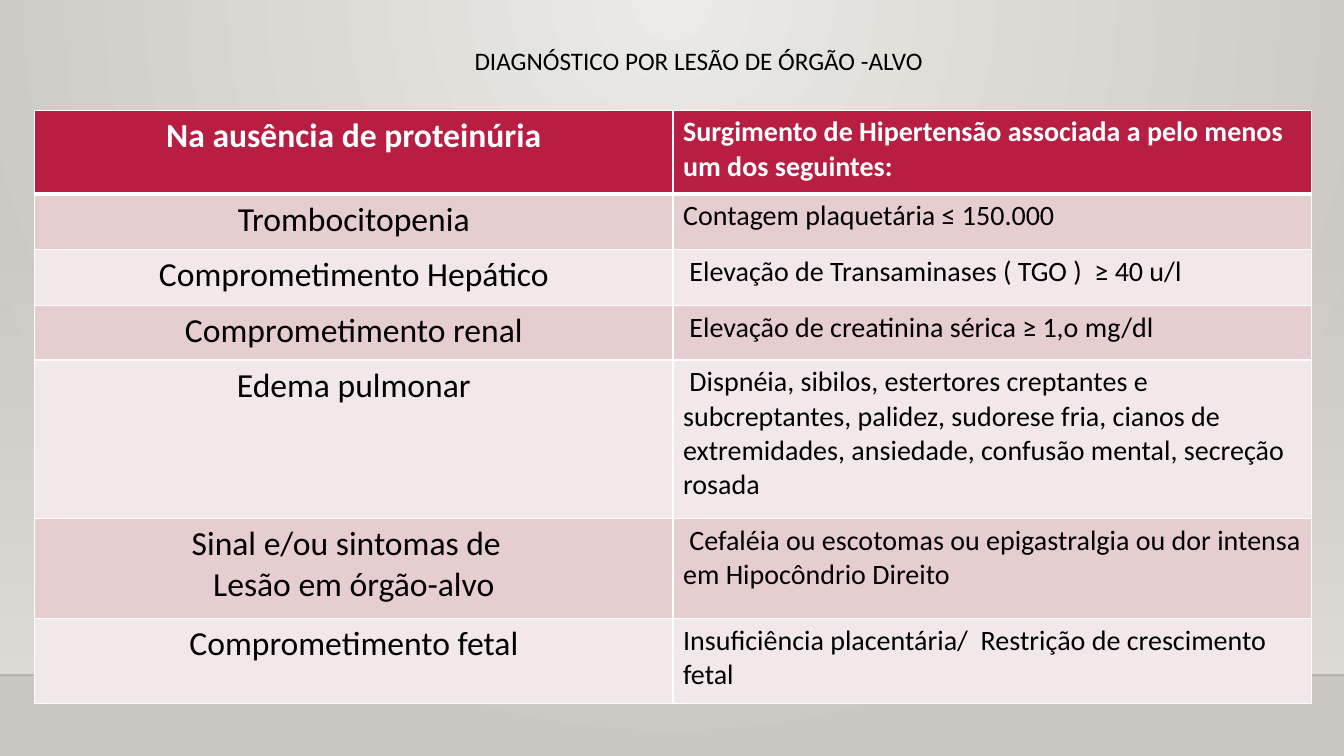
from dataclasses import dataclass
from itertools import cycle

from pptx import Presentation
from pptx.dml.color import RGBColor
from pptx.enum.shapes import MSO_CONNECTOR, MSO_SHAPE
from pptx.enum.text import MSO_ANCHOR, MSO_AUTO_SIZE, PP_ALIGN
from pptx.oxml import parse_xml
from pptx.oxml.ns import nsdecls, qn
from pptx.util import Emu, Pt

PX = 9525
SLIDE_BOX = (0, 0, 1280, 720)


@dataclass(frozen=True)
class Theme:
    """Colours, font and type sizes of the slide."""
    font: str = "Calibri"
    ink: str = "000000"
    white: str = "FFFFFF"
    header: str = "B71E42"
    bands: tuple = ("E6CDCF", "F3E8E9")
    glow: str = "ECEAE7"
    edge: str = "CAC7C1"
    wall: str = "DFDBD5"
    title_size: int = 18
    condition_size: int = 24
    finding_size: int = 20
    border: int = 1
    header_border: int = 3


THEME = Theme()

HEADINGS = ("Na ausência de proteinúria",
            "Surgimento de Hipertensão associada a pelo menos um dos seguintes:")
CRITERIA = (
    ("Trombocitopenia", "Contagem plaquetária ≤ 150.000"),
    ("Comprometimento Hepático", " Elevação de Transaminases ( TGO )  ≥ 40 u/l"),
    ("Comprometimento renal", " Elevação de creatinina sérica ≥ 1,o mg/dl"),
    ("Edema pulmonar",
     " Dispnéia, sibilos, estertores creptantes e subcreptantes, palidez, sudorese fria, "
     "cianos de extremidades, ansiedade, confusão mental, secreção rosada"),
    ("Sinal e/ou sintomas de  \nLesão em órgão-alvo",
     " Cefaléia ou escotomas ou epigastralgia ou dor intensa em Hipocôndrio Direito"),
    ("Comprometimento fetal",
     "Insuficiência placentária/  Restrição de crescimento fetal"),
)
ROW_HEIGHTS = (80, 53, 53, 52, 151, 95, 81)


def px(*lengths):
    """Turn pixel lengths into EMU."""
    return [Emu(length * PX) for length in lengths]


def write(frame, text, size, color=THEME.ink, bold=False, align=PP_ALIGN.LEFT):
    """Fill a text frame, one paragraph per line of text."""
    frame.word_wrap = True
    frame.text = text
    for paragraph in frame.paragraphs:
        paragraph.alignment = align
        for run in paragraph.runs:
            run.font.name = THEME.font
            run.font.size = Pt(size)
            run.font.bold = bold
            run.font.color.rgb = RGBColor.from_string(color)


def set_gradient(properties, first, last, direction, first_alpha=100):
    """Replace a solid fill by a two-stop gradient."""
    gradient = parse_xml(
        f'<a:gradFill {nsdecls("a")} rotWithShape="1"><a:gsLst>'
        f'<a:gs pos="0"><a:srgbClr val="{first}"><a:alpha val="{first_alpha * 1000}"/></a:srgbClr></a:gs>'
        f'<a:gs pos="100000"><a:srgbClr val="{last}"/></a:gs>'
        f'</a:gsLst>{direction}</a:gradFill>')
    solid = properties.find(qn("a:solidFill"))
    properties.replace(solid, gradient)


def set_borders(cell, top, bottom):
    """Draw white borders round a cell, with widths in points."""
    widths = {"lnL": THEME.border, "lnR": THEME.border, "lnT": top, "lnB": bottom}
    properties = cell._tc.get_or_add_tcPr()
    for index, (side, width) in enumerate(widths.items()):
        properties.insert(index, parse_xml(
            f'<a:{side} {nsdecls("a")} w="{Pt(width)}"><a:solidFill>'
            f'<a:srgbClr val="{THEME.white}"/></a:solidFill></a:{side}>'))


def add_backdrop(slide, box):
    """Paint the radial background, the wall and the floor line."""
    left, top, width, height = box
    fill = slide.background.fill
    fill.solid()
    fill.fore_color.rgb = RGBColor.from_string(THEME.edge)
    set_gradient(slide.background._cSld.bg.bgPr, THEME.glow, THEME.edge,
                 '<a:path path="circle"><a:fillToRect l="43000" t="0" r="43000" b="100000"/></a:path>')

    floor = top + height - 77
    wall = slide.shapes.add_shape(MSO_SHAPE.RECTANGLE, *px(left, floor - 431, width, 431))
    wall.shadow.inherit = False
    wall.line.fill.background()
    wall.fill.solid()
    wall.fill.fore_color.rgb = RGBColor.from_string(THEME.wall)
    set_gradient(wall._element.spPr, THEME.wall, THEME.wall,
                 '<a:lin ang="5400000" scaled="0"/>', first_alpha=0)

    floor_line = slide.shapes.add_connector(
        MSO_CONNECTOR.STRAIGHT, *px(left, floor, left + width, floor))
    floor_line.line.width = Pt(1)
    floor_line.line.color.rgb = RGBColor.from_string(THEME.ink)
    properties = floor_line._element.spPr
    ink = properties.find(".//" + qn("a:srgbClr"))
    ink.append(parse_xml(f'<a:alpha {nsdecls("a")} val="20000"/>'))
    properties.append(parse_xml(f'<a:effectLst {nsdecls("a")}/>'))


def add_heading(slide, box):
    """Place the slide title in its box."""
    heading = slide.shapes.title
    heading.left, heading.top, heading.width, heading.height = px(*box)
    frame = heading.text_frame
    frame.vertical_anchor = MSO_ANCHOR.TOP
    write(frame, "DIAGNÓSTICO POR LESÃO DE ÓRGÃO -ALVO", THEME.title_size,
          align=PP_ALIGN.CENTER)
    frame.auto_size = MSO_AUTO_SIZE.SHAPE_TO_FIT_TEXT


def add_criteria_table(slide, box):
    """Place the table of conditions and their findings."""
    rows = (HEADINGS, *CRITERIA)
    table = slide.shapes.add_table(len(rows), len(HEADINGS), *px(*box)).table
    for row, height in zip(table.rows, ROW_HEIGHTS):
        row.height = Emu(height * PX)
    bands = cycle(THEME.bands)
    formats = ((THEME.condition_size, PP_ALIGN.CENTER), (THEME.finding_size, PP_ALIGN.LEFT))
    for index, texts in enumerate(rows):
        is_header = index == 0
        fill = THEME.header if is_header else next(bands)
        for column, (text, (size, align)) in enumerate(zip(texts, formats)):
            cell = table.cell(index, column)
            cell.fill.solid()
            cell.fill.fore_color.rgb = RGBColor.from_string(fill)
            set_borders(cell, top=THEME.header_border if index == 1 else THEME.border,
                        bottom=THEME.header_border if is_header else THEME.border)
            write(cell.text_frame, text, size, bold=is_header, align=align,
                  color=THEME.white if is_header else THEME.ink)


def main():
    """Build the slide and save it."""
    presentation = Presentation()
    presentation.slide_width, presentation.slide_height = px(*SLIDE_BOX[2:])
    slide = presentation.slides.add_slide(presentation.slide_layouts.get_by_name("Title Only"))
    add_backdrop(slide, SLIDE_BOX)
    add_criteria_table(slide, (33, 105, 1216, sum(ROW_HEIGHTS)))
    add_heading(slide, (254, 38, 823, 38))
    presentation.save("out.pptx")


if __name__ == "__main__":
    main()
